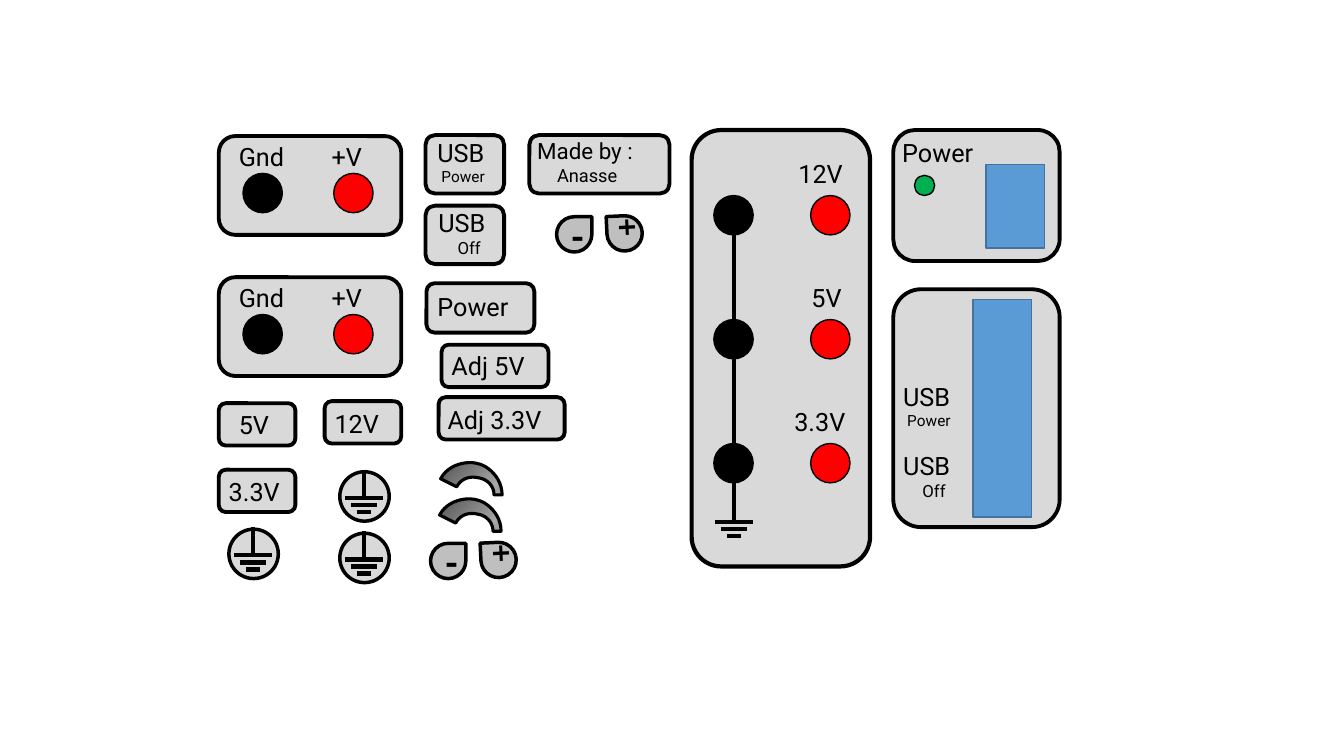
from lxml import etree
from pptx import Presentation
from pptx.dml.color import RGBColor
from pptx.enum.shapes import MSO_CONNECTOR as Connector, MSO_SHAPE as Shape
from pptx.enum.text import MSO_ANCHOR as Anchor, MSO_AUTO_SIZE as AutoSize, PP_ALIGN as Align
from pptx.oxml import parse_xml
from pptx.oxml.ns import nsdecls, qn
from pptx.util import Emu, Pt

PX = 9144  # one hundredth of an inch
BLACK, RED, GREEN = "000000", "FF0000", "00B050"
PLATE, KNOB, CUTOUT, CUTOUT_EDGE = "D9D9D9", "BFBFBF", "5B9BD5", "43739E"
METAL = [(12, "A0A0A0"), (17, "AAAAAA"), (31, "989898"),
         (85, "636363"), (89, "919191"), (91, "DBDBDB")]
USB_POWER = [("USB", dict(size=18)), ("Power", dict(size=11, indent=4))]
USB_OFF = [("USB", dict(size=18)), ("Off", dict(size=12, indent=19))]


def px(length):
    return Emu(round(length * PX))


def colour(code):
    return RGBColor.from_string(code)


def write(para, text, size=18, font="Roboto", bold=False, align=None, indent=0):
    span = para.add_run()
    span.text = text
    span.font.size, span.font.name, span.font.bold = Pt(size), font, bold
    span.font.color.rgb = colour(BLACK)
    if align is not None:
        para.alignment = align
    if indent:
        para._p.get_or_add_pPr().set("marL", str(px(indent)))


def curve(start, first, second, end, steps=12):
    """Points along a cubic Bezier curve, without its start."""
    for step in range(1, steps + 1):
        t = step / steps
        weights = ((1 - t) ** 3, 3 * t * (1 - t) ** 2, 3 * t * t * (1 - t), t ** 3)
        yield tuple(sum(weight * point[axis] for weight, point
                        in zip(weights, (start, first, second, end))) for axis in (0, 1))


class LabelSheet:
    def __init__(self, deck):
        self.page = deck.slides.add_slide(deck.slide_layouts[6])
        self.shapes = self.page.shapes

    def group(self):
        """Put the elements that follow into a new group."""
        self.shapes = self.page.shapes.add_group_shape().shapes

    def ungroup(self):
        self.shapes = self.page.shapes

    def shape(self, kind, x, y, width, height, fill, edge=BLACK, weight=1.0):
        item = self.shapes.add_shape(kind, px(x), px(y), px(width), px(height))
        item.shadow.inherit = False
        item.fill.solid()
        item.fill.fore_color.rgb = colour(fill)
        item.line.color.rgb = colour(edge)
        item.line.width = Pt(weight)
        return item

    def plate(self, x, y, width, height, weight=2.75):
        self.shape(Shape.ROUNDED_RECTANGLE, x, y, width, height, PLATE, weight=weight)

    def cutout(self, x, y, width, height):
        self.shape(Shape.RECTANGLE, x, y, width, height, CUTOUT, CUTOUT_EDGE)

    def dot(self, x, y, fill, size=39, weight=1.0):
        self.shape(Shape.OVAL, x, y, size, size, fill, weight=weight)

    def line(self, x1, y1, x2, y2):
        wire = self.shapes.add_connector(Connector.STRAIGHT, px(x1), px(y1), px(x2), px(y2))
        wire.line.color.rgb = colour(BLACK)
        wire.line.width = Pt(3)
        etree.SubElement(wire._element.spPr, qn("a:effectLst"))

    def text(self, x, y, width, height, *lines):
        """Each line is a string or a pair of a string and its format."""
        box = self.shapes.add_textbox(px(x), px(y), px(width), px(height))
        frame = box.text_frame
        frame.word_wrap = False
        frame.auto_size = AutoSize.SHAPE_TO_FIT_TEXT
        for index, line in enumerate(lines):
            words, style = (line, {}) if isinstance(line, str) else line
            para = frame.add_paragraph() if index else frame.paragraphs[0]
            write(para, words, **style)

    def earth(self, x, y):
        self.line(x, y, x, y + 29)
        for drop, half in ((28, 19), (35, 13), (42, 7)):
            self.line(x - half, y + drop, x + half, y + drop)

    def earth_badge(self, x, y):
        self.group()
        self.dot(x - 24, y + 2, PLATE, size=49, weight=2.5)
        self.earth(x, y)
        self.ungroup()

    def output(self, y):
        self.group()
        self.plate(217, y, 181, 98)
        for x, fill, label_x, width, name in ((241, BLACK, 227, 74, "Gnd"),
                                              (331, RED, 319, 56, "+V")):
            self.dot(x, y + 37, fill)
            self.text(label_x, y, width, 40, name)
        self.ungroup()

    def tag(self, x, y, width, label_x, label_y, label_width, name):
        self.group()
        self.plate(x, y, width, 42)
        self.text(label_x, label_y, label_width, 40, name)
        self.ungroup()

    def knobs(self, x, y):
        """A minus knob and a plus knob side by side."""
        for left, top, sign, size, turn in ((x + 50, y - 1, "+", 24, 267.2), (x, y, "-", 28, 0)):
            knob = self.shape(Shape.TEAR, left, top, 35, 35, KNOB, weight=2.5)
            knob.rotation = turn
            knob.text_frame.vertical_anchor = Anchor.MIDDLE
            write(knob.text_frame.paragraphs[0], sign, size=size, font="Calibri",
                  bold=True, align=Align.CENTER)

    def dial(self, x, y):
        outline = [(0, 16), *curve((0, 16), (8, 1), (27, -2), (37, 1)),
                   *curve((37, 1), (47, 3), (61, 15), (61, 32)), (53, 32),
                   *curve((53, 32), (53, 23), (46, 16), (37, 15)),
                   *curve((37, 15), (29, 13), (20, 16), (16, 24))]
        points = [(px(x + dx), px(y + dy)) for dx, dy in outline]
        builder = self.shapes.build_freeform(*points[0], scale=1.0)
        builder.add_line_segments(points[1:], close=True)
        arc = builder.convert_to_shape()
        arc.shadow.inherit = False
        arc.line.color.rgb = colour(BLACK)
        arc.line.width = Pt(2.25)
        stops = "".join(f'<a:gs pos="{place * 1000}"><a:srgbClr val="{code}"/></a:gs>'
                        for place, code in METAL)
        gradient = parse_xml(
            f'<a:gradFill {nsdecls("a")} rotWithShape="1"><a:gsLst>{stops}</a:gsLst>'
            '<a:path path="circle"><a:fillToRect l="100000" t="100000"/></a:path></a:gradFill>')
        arc._element.spPr.find(qn("a:custGeom")).addnext(gradient)


def main():
    deck = Presentation()
    deck.slide_width, deck.slide_height = px(1333), px(750)
    sheet = LabelSheet(deck)

    # Fixed voltage panel
    sheet.group()
    sheet.plate(686, 129, 177, 433, weight=3)
    rails = ((782, 72, "12V"), (795, 56, "5V"), (778, 79, "3.3V"))
    for row, (x, width, name) in enumerate(rails):
        y = 194 + 123 * row
        sheet.dot(708, y, BLACK)
        sheet.dot(804, y, RED)
        sheet.text(x, y - 42, width, 40, name)
        sheet.line(728, y + 39, 728, y + (123 if row < 2 else 73))
    sheet.earth(728, 490)

    # Power switch panel
    sheet.group()
    sheet.plate(886, 129, 165, 130)
    sheet.cutout(978, 163, 58, 83)
    sheet.dot(907, 174, GREEN, size=20)
    sheet.text(885, 131, 101, 40, "Power")

    # USB switch panel
    sheet.group()
    sheet.plate(886, 287, 165, 236)
    sheet.cutout(965, 297, 58, 216)
    sheet.text(886, 442, 72, 61, *USB_OFF)
    sheet.text(886, 373, 74, 59, *USB_POWER)
    sheet.ungroup()

    for y in (135, 275):
        sheet.output(y)
    sheet.tag(322, 398, 76, 322, 400, 72, "12V")
    sheet.tag(217, 400, 76, 227, 401, 56, "5V")
    sheet.tag(217, 466, 76, 217, 468, 79, "3.3V")
    for x, y in ((361, 466), (251, 523), (361, 527)):
        sheet.earth_badge(x, y)

    sheet.plate(422, 134, 78, 58)
    sheet.text(424, 131, 74, 59, *USB_POWER)
    sheet.plate(422, 204, 78, 58)
    sheet.text(425, 201, 72, 61, *USB_OFF)
    sheet.plate(423, 281, 107, 49)
    sheet.text(424, 284, 101, 40, "Power")

    sheet.knobs(427, 539)
    sheet.dial(436, 495)
    sheet.dial(437, 459)
    sheet.tag(438, 342, 106, 438, 343, 107, "Adj 5V")
    sheet.tag(435, 394, 125, 434, 396, 118, "Adj 3.3V")

    sheet.plate(525, 134, 139, 58)
    sheet.text(523, 131, 129, 59, ("Made by :", dict(size=16)),
               ("Anasse", dict(size=13, align=Align.CENTER, indent=4)))
    sheet.knobs(552, 215)
    deck.save("out.pptx")


if __name__ == "__main__":
    main()
